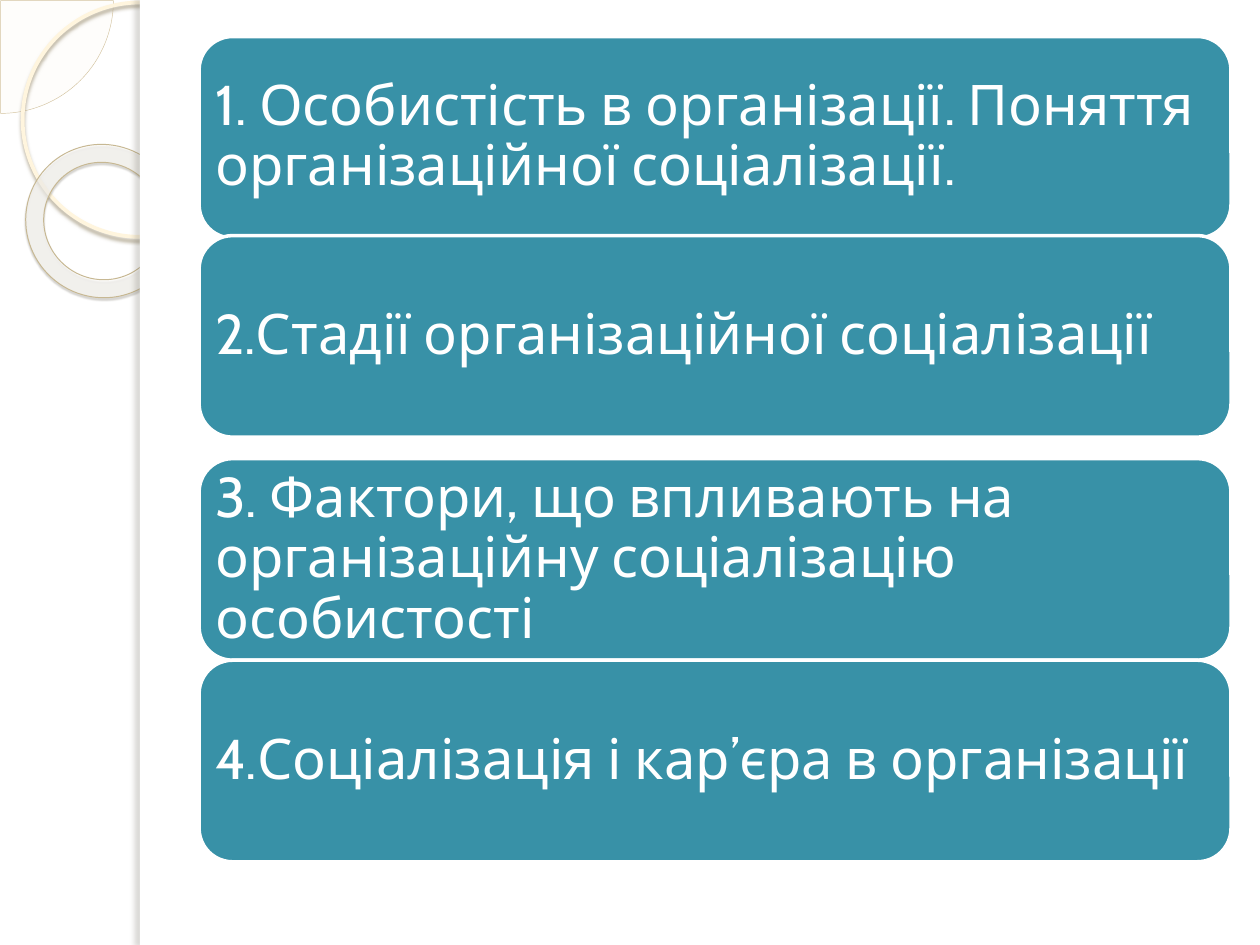
from lxml.etree import SubElement
from pptx import Presentation
from pptx.dml.color import RGBColor
from pptx.enum.shapes import MSO_SHAPE
from pptx.enum.text import MSO_ANCHOR, PP_ALIGN
from pptx.oxml.ns import qn
from pptx.util import Inches, Pt

WHITE = RGBColor(0xFF, 0xFF, 0xFF)
TEAL = RGBColor(0x38, 0x91, 0xA7)
CREAM = RGBColor(0xFE, 0xFA, 0xF4)
IVORY = RGBColor(0xFF, 0xFE, 0xFB)
SAND = RGBColor(0xD3, 0xC3, 0x9F)
PALE_GOLD = RGBColor(0xFF, 0xF5, 0xDE)
KHAKI = RGBColor(0xC7, 0xB8, 0x93)
RING_SHADOW = RGBColor(0xB0, 0xA6, 0x8F)
DONUT_SHADOW = RGBColor(0x5A, 0x54, 0x44)
EDGE_SHADOW = RGBColor(0x73, 0x6F, 0x63)

TOPICS = [
    (0.29, "1. Особистість в організації. Поняття організаційної соціалізації."),
    (1.87, "2.Стадії організаційної соціалізації"),
    (3.64, "3. Фактори, що впливають на організаційну соціалізацію особистості"),
    (5.24, "4.Соціалізація і кар’єра в організації"),
]


def add_figure(slide, kind, box, fill=None, line=None, width=0):
    """Add a preset shape in the box (inches) with plain fill and line."""
    figure = slide.shapes.add_shape(kind, *(Inches(length) for length in box))
    figure.shadow.inherit = False
    if fill is None:
        figure.fill.background()
    else:
        figure.fill.solid()
        figure.fill.fore_color.rgb = fill
    if line is None:
        figure.line.fill.background()
    else:
        figure.line.color.rgb = line
        figure.line.width = Pt(width)
    return figure


def set_opacity(figure, percent):
    """Make the solid fill of a figure partly transparent."""
    color = figure.fill._xPr.find(qn("a:solidFill"))[0]
    SubElement(color, qn("a:alpha"), val=str(percent * 1000))


def add_shadow(figure, color, opacity, blur, distance, angle):
    """Give a figure an outer shadow, with lengths in points."""
    effects = figure._element.spPr.find(qn("a:effectLst"))
    shadow = SubElement(
        effects, qn("a:outerShdw"), blurRad=str(Pt(blur)), dist=str(Pt(distance)),
        dir=str(angle * 60000), algn="tl", rotWithShape="0")
    tint = SubElement(shadow, qn("a:srgbClr"), val=str(color))
    SubElement(tint, qn("a:alpha"), val=str(opacity * 1000))


def add_side_ornament(slide, left, top, width, height):
    """Draw the circles, cut off by the white page panel at the strip's right edge."""
    quarter = add_figure(
        slide, MSO_SHAPE.PIE, (left - 0.89, top - 0.89, 1.79, 1.79), CREAM, SAND, 0.25)
    quarter.adjustments[0] = 0
    quarter.adjustments[1] = 54
    set_opacity(quarter, 33)

    ring = add_figure(
        slide, MSO_SHAPE.OVAL, (left + 0.18, top + 0.02, 1.86, 1.86),
        line=PALE_GOLD, width=2.15)
    add_shadow(ring, RING_SHADOW, 85, 2, 2, 90)

    donut = add_figure(
        slide, MSO_SHAPE.DONUT, (left + 0.2, top + 1.15, 1.23, 1.21), IVORY, KHAKI, 0.58)
    donut.adjustments[0] = 0.118
    donut.rotation = 38.6
    set_opacity(donut, 60)
    add_shadow(donut, DONUT_SHADOW, 35, 1, 1.2, 75)

    edge_left = left + width
    add_figure(slide, MSO_SHAPE.RECTANGLE, (edge_left, top, 10 - edge_left, height), WHITE)
    edge = add_figure(slide, MSO_SHAPE.RECTANGLE, (edge_left, top, 0.08, height), WHITE)
    add_shadow(edge, EDGE_SHADOW, 25, 3, 3, 180)


def add_topic(slide, left, top, width, height, wording):
    """Draw one rounded card with its lecture topic."""
    card = add_figure(
        slide, MSO_SHAPE.ROUNDED_RECTANGLE, (left, top, width, height), TEAL, WHITE, 2)
    frame = card.text_frame
    frame.word_wrap = True
    frame.vertical_anchor = MSO_ANCHOR.MIDDLE
    frame.margin_left = frame.margin_right = Inches(0.05)
    frame.margin_top = frame.margin_bottom = 0
    topic = frame.paragraphs[0]
    topic.text = wording
    topic.alignment = PP_ALIGN.LEFT
    topic.line_spacing = 0.9
    topic.font.name = "Cabin"
    topic.font.size = Pt(32)
    topic.font.color.rgb = WHITE


def main():
    """Build and save the lecture plan slide."""
    presentation = Presentation()
    presentation.slide_width = Inches(10)
    presentation.slide_height = Inches(7.5)
    slide = presentation.slides.add_slide(presentation.slide_layouts[6])
    add_side_ornament(slide, 0, 0, 1.11, 7.5)
    for top, wording in TOPICS:
        add_topic(slide, 1.58, top, 8.19, 1.6, wording)
    presentation.save("out.pptx")


if __name__ == "__main__":
    main()
